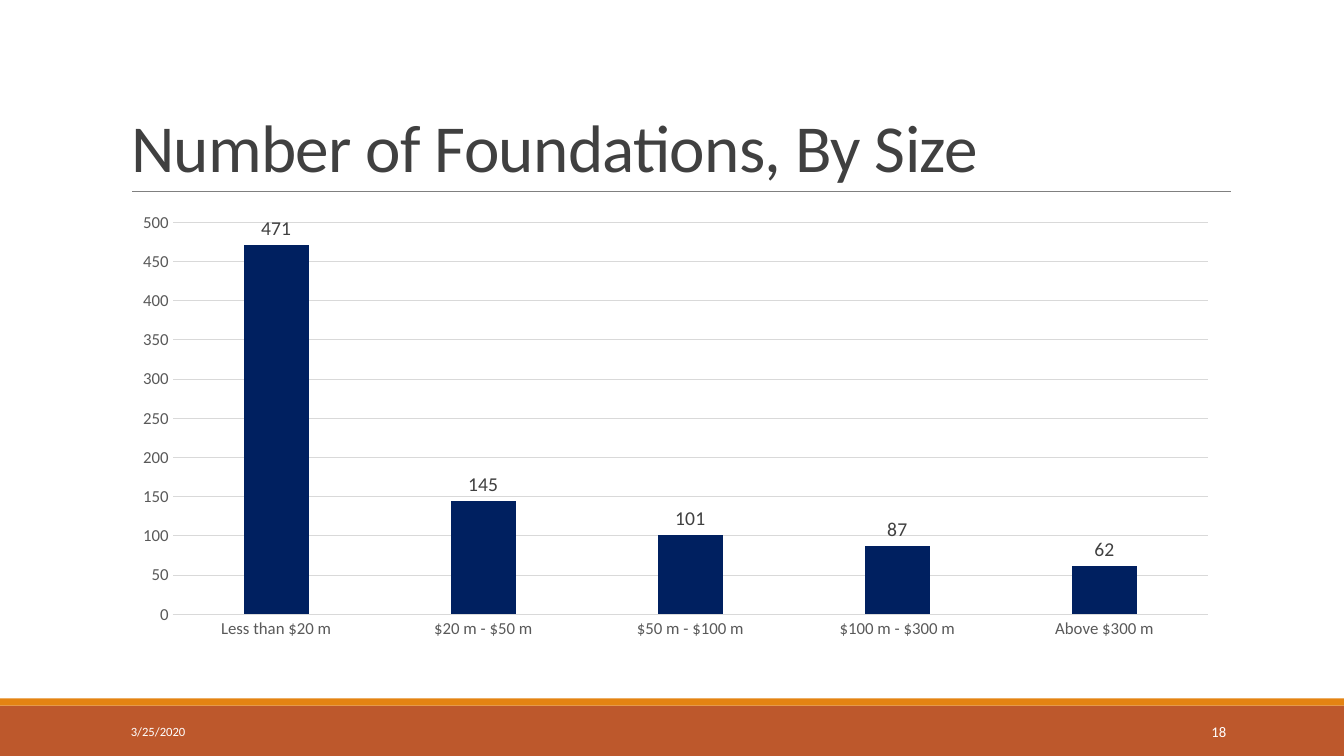
from dataclasses import dataclass

from pptx import Presentation
from pptx.chart.data import CategoryChartData
from pptx.dml.color import RGBColor
from pptx.enum.chart import XL_CHART_TYPE, XL_LABEL_POSITION, XL_TICK_MARK
from pptx.enum.shapes import MSO_CONNECTOR, MSO_SHAPE
from pptx.enum.text import MSO_ANCHOR, MSO_AUTO_SIZE, PP_ALIGN
from pptx.oxml.ns import qn
from pptx.util import Inches, Pt


@dataclass(frozen=True)
class Theme:
    face: str = "Calibri"
    ink: RGBColor = RGBColor(0x40, 0x40, 0x40)
    axis_ink: RGBColor = RGBColor(0x59, 0x59, 0x59)
    grid: RGBColor = RGBColor(0xD9, 0xD9, 0xD9)
    rule: RGBColor = RGBColor(0x80, 0x80, 0x80)
    columns: RGBColor = RGBColor(0x00, 0x20, 0x60)
    band: RGBColor = RGBColor(0xBD, 0x58, 0x2C)
    stripe: RGBColor = RGBColor(0xE4, 0x83, 0x12)
    paper: RGBColor = RGBColor(0xFF, 0xFF, 0xFF)
    title_size: float = 48
    label_size: float = 14
    axis_size: float = 12
    number_size: float = 10.5
    date_size: float = 9


THEME = Theme()


def style_font(font, size, color):
    for name, value in {"name": THEME.face, "size": Pt(size), "bold": False}.items():
        setattr(font, name, value)
    font.color.rgb = color


def style_line(line, color, width):
    line.color.rgb = color
    line.width = Pt(width)


deck = Presentation()
deck.slide_width, deck.slide_height = Inches(13.33), Inches(7.5)
slide = deck.slides.add_slide(deck.slide_layouts[5])
shapes = slide.shapes

# Footer bands
for top, height, color in ((7, 0.5, THEME.band), (6.93, 0.07, THEME.stripe)):
    band = shapes.add_shape(
        MSO_SHAPE.RECTANGLE, 0, Inches(top), deck.slide_width, Inches(height)
    )
    band.shadow.inherit = False
    band.fill.solid()
    band.fill.fore_color.rgb = color
    band.line.fill.background()

# Rule under the title
title_rule = shapes.add_connector(
    MSO_CONNECTOR.STRAIGHT, Inches(1.31), Inches(1.9), Inches(12.21), Inches(1.9)
)
style_line(title_rule.line, THEME.rule, 0.5)
rule_properties = title_rule._element.spPr
rule_properties.append(rule_properties.makeelement(qn("a:effectLst"), {}))

# Title
title = shapes.title
title_place = {"left": 1.2, "top": 0.31, "width": 11, "height": 1.59}
for name, value in title_place.items():
    setattr(title, name, Inches(value))
title_format = {
    "text": "Number of Foundations, By Size",
    "word_wrap": True,
    "auto_size": MSO_AUTO_SIZE.NONE,
    "vertical_anchor": MSO_ANCHOR.BOTTOM,
}
for name, value in title_format.items():
    setattr(title.text_frame, name, value)
heading = title.text_frame.paragraphs[0]
heading.alignment = PP_ALIGN.LEFT
heading.line_spacing = 0.85
style_font(heading.runs[0].font, THEME.title_size, THEME.ink)
heading.runs[0].font._element.set("spc", "-50")

# Foundations chart
foundations = {
    "Less than $20 m": 471,
    "$20 m - $50 m": 145,
    "$50 m - $100 m": 101,
    "$100 m - $300 m": 87,
    "Above $300 m": 62,
}
size_data = CategoryChartData()
size_data.categories = list(foundations)
size_data.add_series("Series 1", list(foundations.values()))
chart = shapes.add_chart(
    XL_CHART_TYPE.COLUMN_CLUSTERED,
    Inches(1.2), Inches(2.02), Inches(11), Inches(4.4), size_data,
).chart
chart.has_title = chart.has_legend = False
style_font(chart.font, THEME.axis_size, THEME.axis_ink)

# Axes
sizes, counts = chart.category_axis, chart.value_axis
for axis in (sizes, counts):
    axis.major_tick_mark = axis.minor_tick_mark = XL_TICK_MARK.NONE
    style_font(axis.tick_labels.font, THEME.axis_size, THEME.axis_ink)
scale = {"minimum_scale": 0, "maximum_scale": 500, "major_unit": 50}
for name, value in scale.items():
    setattr(counts, name, value)
counts.format.line.fill.background()
for line in (sizes.format.line, counts.major_gridlines.format.line):
    style_line(line, THEME.grid, 0.75)

# Columns and their values
plot = chart.plots[0]
plot_format = {
    "gap_width": 219,
    "overlap": -27,
    "vary_by_categories": False,
    "has_data_labels": True,
}
for name, value in plot_format.items():
    setattr(plot, name, value)
columns = plot.series[0].format
columns.fill.solid()
columns.fill.fore_color.rgb = THEME.columns
plot.data_labels.show_value = True
plot.data_labels.position = XL_LABEL_POSITION.OUTSIDE_END
style_font(plot.data_labels.font, THEME.label_size, THEME.ink)

# Date and slide number
for text, left, width, size, alignment in (
    ("3/25/2020", 1.2, 2.7, THEME.date_size, PP_ALIGN.LEFT),
    ("18", 10.83, 1.43, THEME.number_size, PP_ALIGN.RIGHT),
):
    footer = shapes.add_textbox(
        Inches(left), Inches(7.06), Inches(width), Inches(0.4)
    ).text_frame
    footer_format = {
        "text": text,
        "word_wrap": True,
        "vertical_anchor": MSO_ANCHOR.MIDDLE,
    }
    for name, value in footer_format.items():
        setattr(footer, name, value)
    footer.paragraphs[0].alignment = alignment
    style_font(footer.paragraphs[0].runs[0].font, size, THEME.paper)

deck.save("out.pptx")
